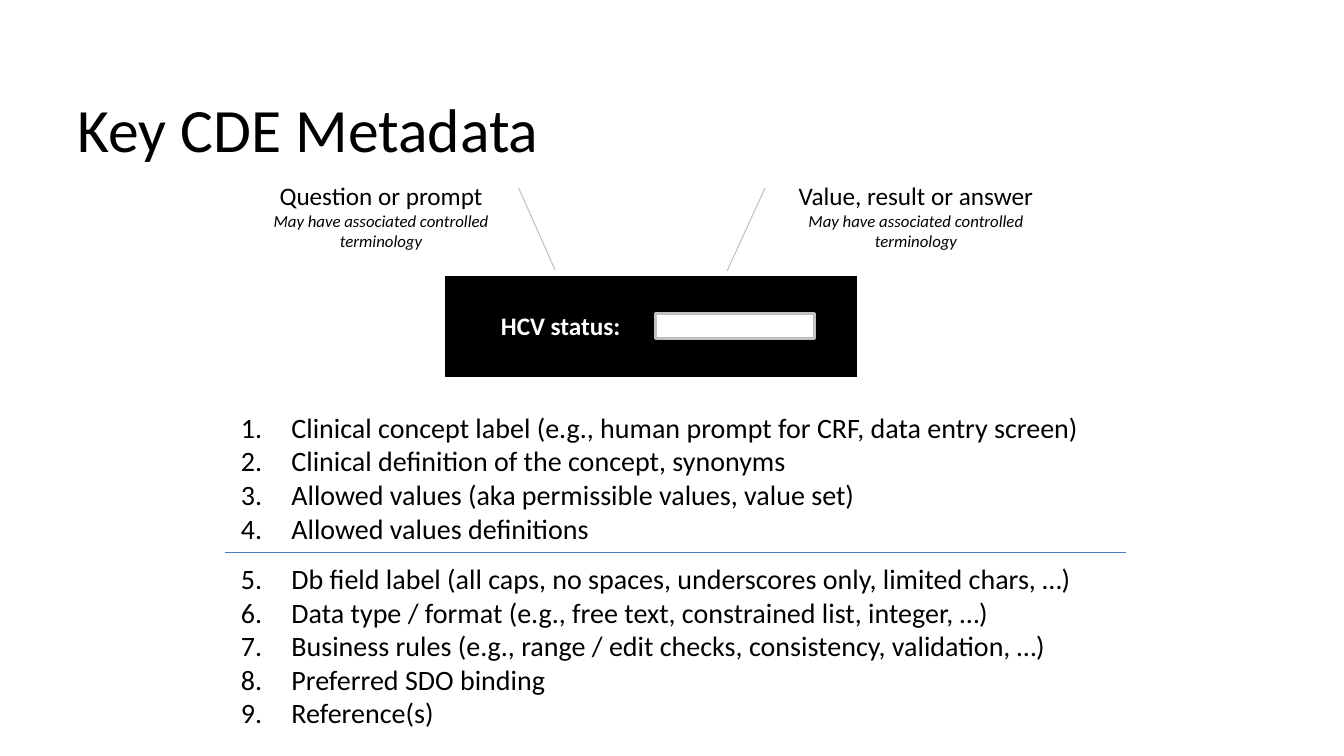
import pptx
import pptx.dml.color
import pptx.enum.shapes
import pptx.enum.text
import pptx.oxml.ns
import pptx.util
from lxml import etree

Inches = pptx.util.Inches
Pt = pptx.util.Pt
MSO_SHAPE = pptx.enum.shapes.MSO_SHAPE
PP_ALIGN = pptx.enum.text.PP_ALIGN
MSO_ANCHOR = pptx.enum.text.MSO_ANCHOR
MSO_AUTO_SIZE = pptx.enum.text.MSO_AUTO_SIZE
qn = pptx.oxml.ns.qn

FONT = "Calibri"
COLORS = {"black": "000000", "white": "FFFFFF", "gray": "C0C0C0", "blue": "4B7EBC"}

CALLOUTS = [
    ("Question or prompt", (2.5, 1.74, 2.56, 0.88), (0.143, 1.033, 1.069, 1.175)),
    ("Value, result or answer", (7.67, 1.74, 2.83, 0.73), (0.172, -0.029, 1.299, -0.162)),
]
CALLOUT_NOTE = "May have associated controlled terminology"

CLINICAL_ITEMS = [
    "Clinical concept label (e.g., human prompt for CRF, data entry screen)",
    "Clinical definition of the concept, synonyms",
    "Allowed values (aka permissible values, value set)",
    "Allowed values definitions",
]
TECHNICAL_ITEMS = [
    "Db field label (all caps, no spaces, underscores only, limited chars, …)",
    "Data type / format (e.g., free text, constrained list, integer, …)",
    "Business rules (e.g., range / edit checks, consistency, validation, …)",
    "Preferred SDO binding",
    "Reference(s)",
]


def rgb(name):
    return pptx.dml.color.RGBColor.from_string(COLORS[name])


def place(sp, box):
    sp.left, sp.top, sp.width, sp.height = [Inches(v) for v in box]


def add_run(p, text, size, color="black", bold=False, italic=False):
    r = p.add_run()
    r.text = text
    r.font.name = FONT
    r.font.size = Pt(size)
    r.font.bold = bold
    r.font.italic = italic
    r.font.color.rgb = rgb(color)


def add_shape(s, kind, box, line, width, fill=None):
    sp = s.shapes.add_shape(kind, *[Inches(v) for v in box])
    sp.shadow.inherit = False
    if fill:
        sp.fill.solid()
        sp.fill.fore_color.rgb = rgb(fill)
    else:
        sp.fill.background()
    sp.line.color.rgb = rgb(line)
    sp.line.width = Pt(width)
    return sp


def add_callout(s, heading, box, adjustments):
    sp = add_shape(s, MSO_SHAPE.LINE_CALLOUT_1_NO_BORDER, box, "gray", 0.75)
    for i, value in enumerate(adjustments):
        sp.adjustments[i] = value
    tf = sp.text_frame
    tf.word_wrap = True
    tf.vertical_anchor = MSO_ANCHOR.TOP
    p = tf.paragraphs[0]
    p.alignment = PP_ALIGN.CENTER
    add_run(p, heading, 18)
    p = tf.add_paragraph()
    p.alignment = PP_ALIGN.CENTER
    add_run(p, CALLOUT_NOTE, 12, italic=True)


def add_label(s, text, box):
    sp = s.shapes.add_textbox(*[Inches(v) for v in box])
    tf = sp.text_frame
    tf.word_wrap = False
    tf.auto_size = MSO_AUTO_SIZE.SHAPE_TO_FIT_TEXT
    add_run(tf.paragraphs[0], text, 18, "white", bold=True)


def add_divider(s, x1, x2, y):
    line = s.shapes.add_connector(
        pptx.enum.shapes.MSO_CONNECTOR.STRAIGHT, Inches(x1), Inches(y), Inches(x2), Inches(y))
    line.line.color.rgb = rgb("blue")
    line.line.width = Pt(0.75)
    etree.SubElement(line._element.spPr, qn("a:effectLst"))


def number_paragraph(p):
    pPr = p._p.get_or_add_pPr()
    pPr.set("marL", str(Inches(0.5)))
    pPr.set("indent", str(Inches(-0.5)))
    font = etree.SubElement(pPr, qn("a:buFont"))
    font.set("typeface", FONT)
    etree.SubElement(pPr, qn("a:buAutoNum")).set("type", "arabicPeriod")


def fill_title(sp, text):
    place(sp, (0.67, 0.64, 12, 1.25))
    tf = sp.text_frame
    tf.auto_size = MSO_AUTO_SIZE.NONE
    tf.vertical_anchor = MSO_ANCHOR.MIDDLE
    p = tf.paragraphs[0]
    p.alignment = PP_ALIGN.LEFT
    add_run(p, text, 44)


def fill_list(sp, items, group_start):
    place(sp, (2.29, 4.02, 8.83, 3.38))
    tf = sp.text_frame
    tf.word_wrap = True
    tf.auto_size = MSO_AUTO_SIZE.NONE
    tf.vertical_anchor = MSO_ANCHOR.TOP
    for i, item in enumerate(items):
        p = tf.add_paragraph() if i else tf.paragraphs[0]
        p.space_before = Pt(12 if i == group_start else 0)
        number_paragraph(p)
        add_run(p, item, 20)


def main():
    prs = pptx.Presentation()
    prs.slide_width = Inches(13.33)
    prs.slide_height = Inches(7.5)
    s = prs.slides.add_slide(prs.slide_layouts[1])

    fill_title(s.shapes.title, "Key CDE Metadata")
    fill_list(s.placeholders[1], CLINICAL_ITEMS + TECHNICAL_ITEMS, len(CLINICAL_ITEMS))
    add_shape(s, MSO_SHAPE.RECTANGLE, (4.42, 2.74, 4.08, 1), "black", 0.75, "black")
    add_label(s, "HCV status:", (4.87, 3.03, 1.4, 0.4))
    add_shape(s, MSO_SHAPE.RECTANGLE, (6.5, 3.11, 1.58, 0.25), "gray", 2.25, "white")
    for heading, box, adjustments in CALLOUTS:
        add_callout(s, heading, box, adjustments)
    add_divider(s, 2.23, 11.17, 5.48)

    prs.save("out.pptx")


if __name__ == "__main__":
    main()
